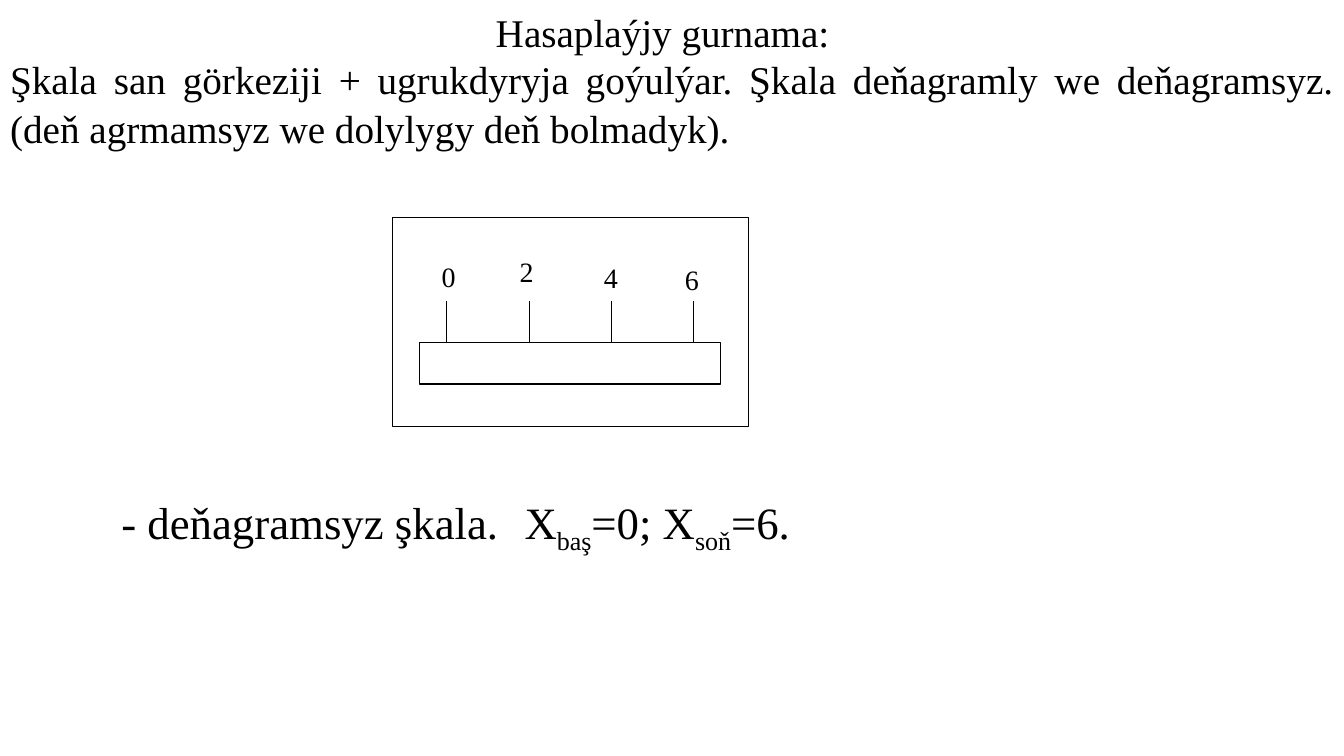
from dataclasses import dataclass

from lxml.etree import SubElement
from pptx import Presentation
from pptx.dml.color import RGBColor
from pptx.enum.shapes import MSO_CONNECTOR as Line, MSO_SHAPE as Shape
from pptx.enum.text import MSO_ANCHOR as Anchor, MSO_AUTO_SIZE as Fit, PP_ALIGN as Align
from pptx.oxml.ns import qn
from pptx.util import Pt

BLACK = RGBColor(0, 0, 0)
FONT = "Times New Roman"
THIN = 0.75


@dataclass
class Box:
    left: float
    top: float
    width: float
    height: float

    def lengths(self) -> tuple:
        return Pt(self.left), Pt(self.top), Pt(self.width), Pt(self.height)


@dataclass
class Label:
    text: str
    left: float
    top: float


@dataclass
class Part:
    text: str
    sub: bool = False


FRAME = Box(280.1, 155.5, 254.9, 149)
SCALE = Box(299.5, 244.8, 215.3, 29.5)
TICK_LEFT, TICK_STEP, TICK_TOP = 319, 58.9, 215.3
LABELS = [
    Label("0", 315.4, 183.6),
    Label("2", 371.2, 180),
    Label("4", 431.3, 184.3),
    Label("6", 489.2, 185.8),
]
RANGE = [
    Part("- deňagramsyz şkala.\tX"),
    Part("baş", True),
    Part("=0; X"),
    Part("soň", True),
    Part("=6."),
]


def write(shape, parts: list[Part], size: float, align: Align,
          spacing: float, tab: float = 0) -> None:
    frame = shape.text_frame
    frame.word_wrap = True
    frame.auto_size = Fit.NONE
    frame.vertical_anchor = Anchor.TOP
    para = frame.paragraphs[0]
    props = para._p.get_or_add_pPr()
    props.set("marL", "0")
    props.set("indent", "0")
    SubElement(props, qn("a:buNone"))
    if tab:
        stops = SubElement(props, qn("a:tabLst"))
        SubElement(stops, qn("a:tab"), pos=str(Pt(tab)), algn="l")
    para.alignment = align
    para.line_spacing = spacing
    para.space_before = Pt(0)
    for part in parts:
        run = para.add_run()
        run.text = part.text
        run.font.name = FONT
        run.font.size = Pt(size)
        run.font.color.rgb = BLACK
        if part.sub:
            run._r.get_or_add_rPr().set("baseline", "-25000")


def place(shape, box: Box) -> None:
    shape.left, shape.top, shape.width, shape.height = box.lengths()


def outline(slide, box: Box) -> None:
    shape = slide.shapes.add_shape(Shape.RECTANGLE, *box.lengths())
    shape.shadow.inherit = False
    shape.fill.background()
    shape.line.color.rgb = BLACK
    shape.line.width = Pt(THIN)


def tick(slide, left: float) -> None:
    line = slide.shapes.add_connector(
        Line.STRAIGHT, Pt(left), Pt(TICK_TOP), Pt(left), Pt(SCALE.top))
    line.line.color.rgb = BLACK
    line.line.width = Pt(THIN)
    SubElement(line._element.spPr, qn("a:effectLst"))


def number(slide, label: Label) -> None:
    box = Box(label.left, label.top, 19.4, 43.2)
    shape = slide.shapes.add_textbox(*box.lengths())
    frame = shape.text_frame
    frame.margin_left = frame.margin_right = Pt(0)
    frame.margin_top = frame.margin_bottom = Pt(0)
    write(shape, [Part(label.text)], 20, Align.LEFT, 1.07)


def main() -> None:
    deck = Presentation()
    deck.slide_width, deck.slide_height = Pt(960), Pt(540)
    slide = deck.slides.add_slide(deck.slide_layouts[1])

    title = slide.shapes.title
    place(title, Box(0, 0, 946.6, 38))
    write(title, [Part("Hasaplaýjy gurnama:")], 28, Align.CENTER, 1.07)

    body = slide.placeholders[1]
    place(body, Box(0, 35, 960, 77))
    write(body, [Part("Şkala san görkeziji + ugrukdyryja goýulýar. "
                      "Şkala deňagramly we deňagramsyz. "
                      "(deň agrmamsyz we dolylygy deň bolmadyk).")],
          28, Align.JUSTIFY, 1.03)

    outline(slide, FRAME)
    outline(slide, SCALE)
    for index, label in enumerate(LABELS):
        tick(slide, TICK_LEFT + index * TICK_STEP)
        number(slide, label)

    note = slide.shapes.add_textbox(*Box(79.6, 348.5, 693, 88.6).lengths())
    write(note, RANGE, 32, Align.LEFT, 1.03, tab=333)

    deck.save("out.pptx")


if __name__ == "__main__":
    main()
